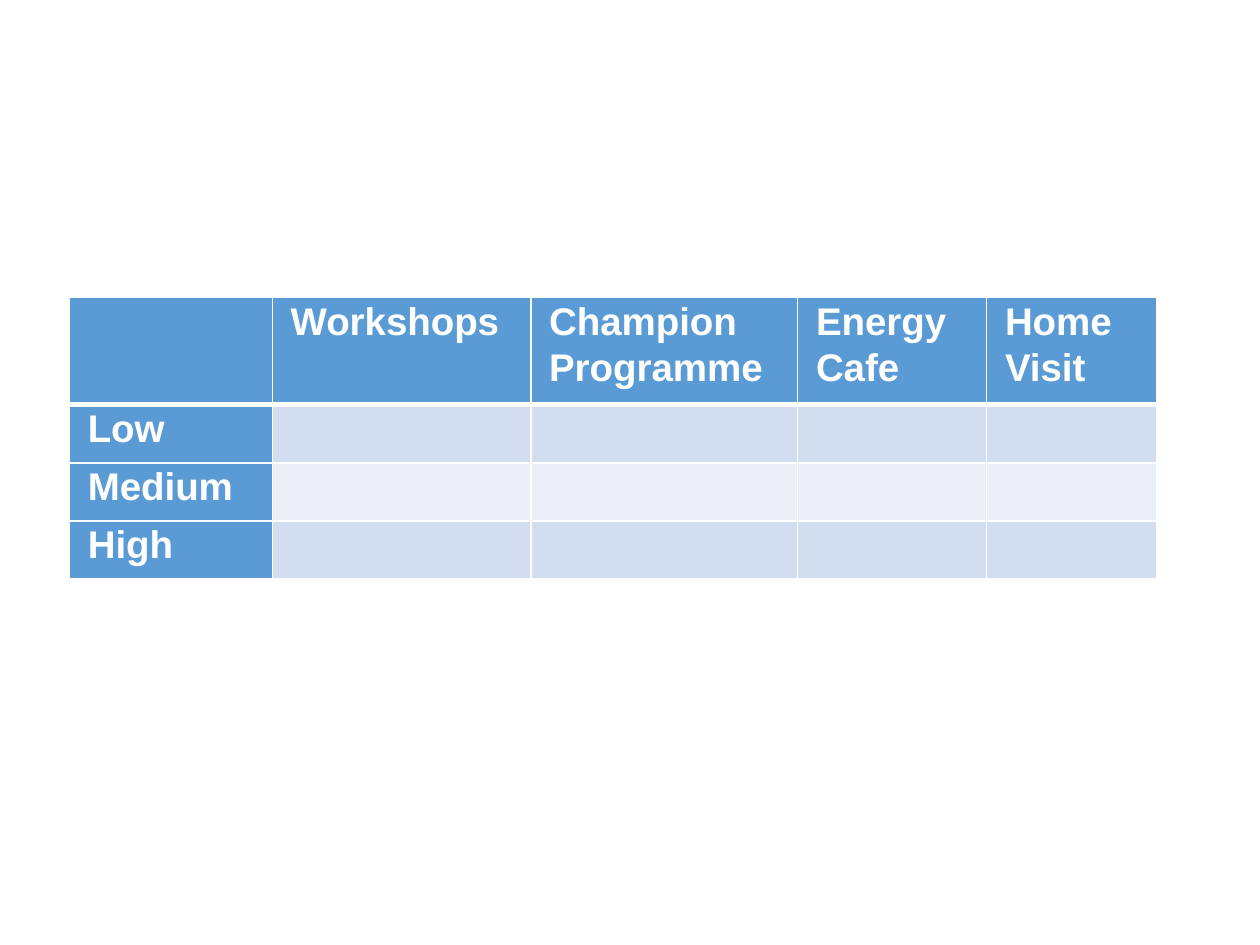
from dataclasses import dataclass

from lxml import etree
from pptx import Presentation
from pptx import util as u
from pptx.dml.color import RGBColor
from pptx.enum import text
from pptx.oxml.ns import qn

WHITE = "FFFFFF"
HEADING_BLUE = "5B9BD5"
BAND_COLOURS = ("D2DEEF", "EAEFF7")
COLUMN_WIDTHS = (4.09, 5.21, 5.38, 3.81, 3.43)
HEADER_HEIGHT = 2.16
LEVEL_HEIGHT = 1.17


@dataclass
class Level:
    label: str
    height: float
    fills: tuple[str, ...]
    top_line: float = 1
    bottom_line: float = 1
    services: tuple[str, ...] = ("",) * 4


def rgb(colour: str) -> RGBColor:
    return RGBColor.from_string(colour)


def draw_border(cell, side: str, points: float) -> None:
    properties = cell._tc.get_or_add_tcPr()
    line = etree.SubElement(properties, qn(f"a:ln{side}"), w=str(u.Pt(points)))
    fill = etree.SubElement(line, qn("a:solidFill"))
    etree.SubElement(fill, qn("a:srgbClr"), val=WHITE)


def draw_cell(cell, wording: str, fill: str, level: Level) -> None:
    for side, points in (("L", 1), ("R", 1), ("T", level.top_line), ("B", level.bottom_line)):
        draw_border(cell, side, points)
    cell.fill.solid()
    cell.fill.fore_color.rgb = rgb(fill)
    cell.vertical_anchor = text.MSO_ANCHOR.TOP
    cell.margin_left = cell.margin_right = u.Cm(0.37)
    cell.margin_top = cell.margin_bottom = 0
    if not wording:
        return
    cell.text_frame.text = wording
    paragraph = cell.text_frame.paragraphs[0]
    paragraph.line_spacing = 1.07
    paragraph.space_after = u.Pt(8)
    font = paragraph.runs[0].font
    font.name, font.size, font.bold = "Arial", u.Pt(22), True
    font.color.rgb = rgb(WHITE)


def draw_table(slide, levels: list[Level]) -> None:
    frame = slide.shapes.add_table(
        len(levels), len(COLUMN_WIDTHS), u.Cm(1.4), u.Cm(6),
        u.Cm(sum(COLUMN_WIDTHS)), u.Cm(sum(level.height for level in levels)),
    )
    table = frame.table
    table.first_col = True
    for column, width in zip(table.columns, COLUMN_WIDTHS):
        column.width = u.Cm(width)
    for row, level in zip(table.rows, levels):
        row.height = u.Cm(level.height)
        for cell, wording, fill in zip(row.cells, (level.label, *level.services), level.fills):
            draw_cell(cell, wording, fill, level)


def main() -> None:
    deck = Presentation()
    deck.slide_width, deck.slide_height = u.Cm(25.4), u.Cm(19.05)
    slide = deck.slides.add_slide(deck.slide_layouts[6])
    levels = [
        Level("", HEADER_HEIGHT, (HEADING_BLUE,) * 5, bottom_line=3,
              services=("Workshops", "Champion Programme", "Energy Cafe", "Home Visit"))
    ]
    for index, label in enumerate(("Low", "Medium", "High")):
        fills = (HEADING_BLUE, *(BAND_COLOURS[index % 2],) * 4)
        levels.append(Level(label, LEVEL_HEIGHT, fills, top_line=1 if index else 3))
    draw_table(slide, levels)
    deck.save("out.pptx")


if __name__ == "__main__":
    main()
